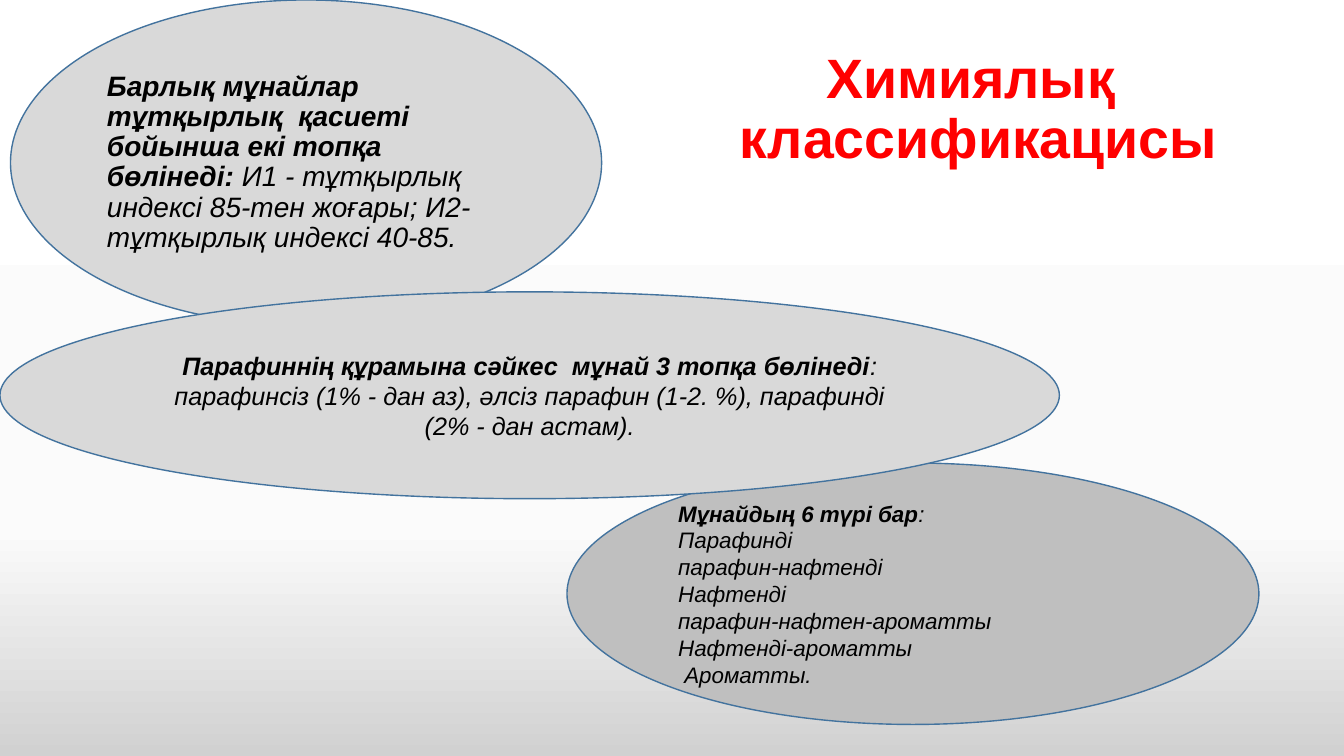
from copy import deepcopy

from pptx import Presentation
from pptx.dml.color import RGBColor as Rgb
from pptx.enum.shapes import MSO_SHAPE as Shape
from pptx.enum.text import MSO_ANCHOR as Anchor, MSO_AUTO_SIZE as AutoSize, PP_ALIGN as Align
from pptx.oxml.ns import qn
from pptx.util import Pt

THEME = {
    "font": "Arial",
    "title": Rgb.from_string("FF0000"),
    "text": Rgb.from_string("000000"),
    "outline": Rgb.from_string("43739E"),
    "light": Rgb.from_string("D9D9D9"),
    "dark": Rgb.from_string("BFBFBF"),
    "backdrop": [(0, "FFFFFF"), (0.7, "FBFBFB"), (1, "D1D1D1")],
    "title_size": Pt(39.6),
    "viscosity_size": Pt(20),
    "paraffin_size": Pt(18),
    "types_size": Pt(16),
}
PX = 9525


def place(part, box):
    for side, length in zip(("left", "top", "width", "height"), box):
        setattr(part, side, length * PX)


def apply(target, values):
    for key, value in values.items():
        setattr(target, key, value)


deck = Presentation()
apply(deck, {"slide_width": 1280 * PX, "slide_height": 720 * PX})
slide = deck.slides.add_slide(deck.slide_layouts[5])

backdrop = slide.background.fill
backdrop.gradient()
backdrop.gradient_angle = 270
stop_list = next(slide.element.iter(qn("a:gsLst")))
stop_list.append(deepcopy(stop_list[-1]))
for stop, (position, shade) in zip(backdrop.gradient_stops, THEME["backdrop"]):
    stop.color.rgb = Rgb.from_string(shade)
    stop.position = position

heading = slide.shapes.title
place(heading, (657, 38, 535, 189))
apply(heading.text_frame, {
    "text": "Химиялық\v классификацисы",
    "word_wrap": True,
    "auto_size": AutoSize.NONE,
    "vertical_anchor": Anchor.MIDDLE,
    "margin_bottom": 60 * PX,
})
heading_line = heading.text_frame.paragraphs[0]
apply(heading_line, {"alignment": Align.CENTER, "line_spacing": 0.9})
for run in heading_line.runs:
    apply(run.font, {"name": THEME["font"], "size": THEME["title_size"], "bold": True})
    run.font.color.rgb = THEME["title"]

classifications = [
    ((10, 0, 563, 310), "light", "viscosity_size", Align.LEFT, 0.9, [
        ("Барлық мұнайлар тұтқырлық  қасиеті бойынша екі топқа бөлінеді:",
         " И1 - тұтқырлық индексі 85-тен жоғары; И2-тұтқырлық индексі 40-85."),
    ]),
    ((540, 441, 659, 249), "dark", "types_size", Align.LEFT, 1.0, [
        ("Мұнайдың 6 түрі бар", ":"),
        ("", "Парафинді"),
        ("", "парафин-нафтенді"),
        ("", "Нафтенді"),
        ("", "парафин-нафтен-ароматты"),
        ("", "Нафтенді-ароматты"),
        ("", " Ароматты."),
    ]),
    ((0, 278, 1009, 197), "light", "paraffin_size", Align.CENTER, 1.0, [
        ("Парафиннің құрамына сәйкес  мұнай 3 топқа бөлінеді",
         ": парафинсіз (1% - дан аз), әлсіз парафин (1-2. %), парафинді (2% - дан астам)."),
    ]),
]

for box, shade, size, alignment, spacing, lines in classifications:
    oval = slide.shapes.add_shape(Shape.OVAL, 0, 0, PX, PX)
    place(oval, box)
    oval.shadow.inherit = False
    oval.fill.solid()
    oval.fill.fore_color.rgb = THEME[shade]
    oval.line.color.rgb = THEME["outline"]
    oval.line.width = Pt(1)
    frame = oval.text_frame
    apply(frame, {"word_wrap": True, "vertical_anchor": Anchor.MIDDLE})
    for index, (lead, detail) in enumerate(lines):
        line = frame.add_paragraph() if index else frame.paragraphs[0]
        apply(line, {"alignment": alignment, "line_spacing": spacing})
        for wording, bold in ((lead, True), (detail, False)):
            if wording:
                run = line.add_run()
                run.text = wording
                apply(run.font, {"name": THEME["font"], "size": THEME[size],
                                 "bold": bold, "italic": True})
                run.font.color.rgb = THEME["text"]

deck.save("out.pptx")
